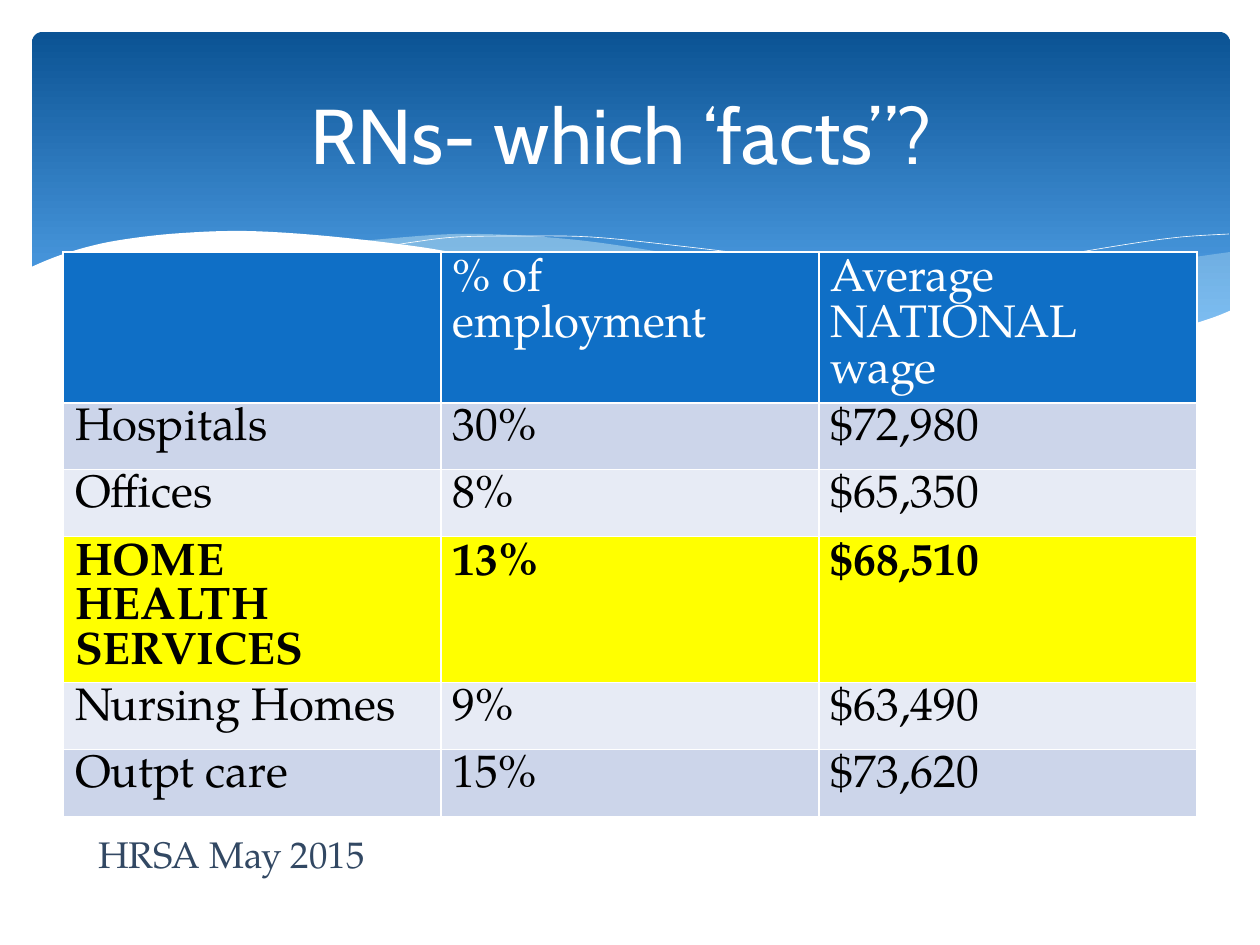
from lxml.etree import SubElement
from pptx import Presentation
from pptx.dml.color import RGBColor
from pptx.enum.shapes import MSO_SHAPE as SHAPE
from pptx.enum.text import MSO_ANCHOR as ANCHOR, PP_ALIGN as ALIGN
from pptx.oxml.ns import qn
from pptx.util import Emu, Pt

SCALE = 10320
SANS = "Cabin"
SERIF = "TeX Gyre Pagella"

WHITE = RGBColor(0xFF, 0xFF, 0xFF)
BLACK = RGBColor(0x00, 0x00, 0x00)
NAVY = RGBColor(0x0B, 0x53, 0x94)
SKY = RGBColor(0x59, 0xAA, 0xF2)
MIST = RGBColor(0xDB, 0xF5, 0xF9)
SLATE = RGBColor(0x32, 0x48, 0x63)
BLUE = RGBColor(0x0F, 0x6F, 0xC6)
BAND_DARK = RGBColor(0xCC, 0xD5, 0xEA)
BAND_LIGHT = RGBColor(0xE7, 0xEB, 0xF5)
YELLOW = RGBColor(0xFF, 0xFF, 0x00)

RIGHT_TOP = [(1230, 252), (1177, 260), (1123, 272), (1084, 281), (982, 306),
             (890, 324), (834, 334)]
RIGHT_BOTTOM = [(834, 334), (906, 344), (969, 348), (1026, 350), (1076, 347),
                (1121, 342), (1161, 334), (1196, 324), (1230, 311)]
MIDDLE_TOP = [(1125, 344), (1055, 334), (976, 321), (890, 302), (792, 279),
              (717, 262), (648, 250), (586, 241), (529, 236), (478, 234),
              (433, 235), (361, 241)]
MIDDLE_BOTTOM = [(361, 241), (431, 251), (509, 266), (566, 279), (667, 303),
                 (758, 322), (838, 336), (910, 345), (974, 350), (1030, 351),
                 (1081, 349), (1125, 344)]
LONG_LINE = [(390, 246), (414, 242), (457, 237), (525, 236), (591, 237),
             (671, 245), (766, 257), (876, 276), (1002, 304), (1143, 342)]
RISING_LINE = [(773, 323), (876, 297), (978, 273), (1053, 257), (1129, 244),
               (1181, 237), (1229, 234)]
FRONT_TOP = [(29, 268), (58, 256), (95, 245), (134, 238), (183, 233),
             (244, 231), (315, 235), (398, 244), (460, 254), (563, 277),
             (667, 301), (760, 321), (843, 334), (915, 343), (980, 347),
             (1038, 348), (1087, 346), (1132, 339), (1172, 330), (1209, 319),
             (1232, 310)]
FRONT_BASE = [(1232, 415), (29, 415)]

ROWS = [
    ("", "% of employment", "Average NATIONAL wage"),
    ("Hospitals", "30%", "$72,980"),
    ("Offices", "8%", "$65,350"),
    ("HOME HEALTH SERVICES", "13%", "$68,510"),
    ("Nursing Homes", "9%", "$63,490"),
    ("Outpt care", "15%", "$73,620"),
]
HEIGHTS = [151, 67, 67, 146, 67, 67]
COL_WIDTH = 378
HIGHLIGHT = 3


def px(n):
    return Emu(round(n * SCALE))


def box(*lengths):
    return [px(n) for n in lengths]


def smooth(points, steps=5):
    padded = [points[0], *points, points[-1]]
    curve = [points[0]]
    for a, b, c, d in zip(padded, padded[1:], padded[2:], padded[3:]):
        for i in range(1, steps + 1):
            t = i / steps
            curve.append(tuple(
                (2 * q + (r - p) * t + (2 * p - 5 * q + 4 * r - u) * t ** 2
                 + (3 * q - p - 3 * r + u) * t ** 3) / 2
                for p, q, r, u in zip(a, b, c, d)))
    return curve


def add_wave(s, points, color=None, opacity=100):
    pts = [box(*point) for point in points]
    builder = s.shapes.build_freeform(*pts[0], scale=1.0)
    builder.add_line_segments(pts[1:], close=color is not None)
    sp = builder.convert_to_shape()
    sp.shadow.inherit = False
    if color is None:
        sp.fill.background()
        sp.line.color.rgb = WHITE
        sp.line.width = Pt(0.5)
        return
    sp.fill.solid()
    sp.fill.fore_color.rgb = color
    sp.line.fill.background()
    if opacity < 100:
        clr = sp.fill._xPr.find(qn("a:solidFill"))[0]
        SubElement(clr, qn("a:alpha"), val=str(opacity * 1000))


def add_banner(s):
    sp = s.shapes.add_shape(SHAPE.ROUNDED_RECTANGLE, *box(32, 32, 1198, 340))
    sp.adjustments[0] = 0.03
    sp.shadow.inherit = False
    sp.line.fill.background()
    sp.fill.gradient()
    sp.fill.gradient_angle = 270
    for stop, color, pos in zip(sp.fill.gradient_stops, (NAVY, SKY), (0, 0.9)):
        stop.color.rgb = color
        stop.position = pos


def add_run(p, text, size, font, color, bold=False):
    r = p.add_run()
    r.text = text
    r.font.size = Pt(size)
    r.font.name = font
    r.font.color.rgb = color
    r.font.bold = bold


def set_title(s, text):
    sp = s.shapes.title
    sp.left, sp.top, sp.width, sp.height = box(63, 47, 1134, 173)
    tf = sp.text_frame
    tf.vertical_anchor = ANCHOR.MIDDLE
    p = tf.paragraphs[0]
    p.alignment = ALIGN.CENTER
    add_run(p, text, 63, SANS, WHITE)
    s.shapes._spTree.append(sp._element)


def set_borders(cell):
    tc_pr = cell._tc.get_or_add_tcPr()
    for i, side in enumerate(("lnL", "lnR", "lnT", "lnB")):
        ln = tc_pr.makeelement(qn("a:" + side), {"w": str(Pt(1))})
        fill = SubElement(ln, qn("a:solidFill"))
        SubElement(fill, qn("a:srgbClr"), val=str(WHITE))
        tc_pr.insert(i, ln)


def row_fill(row):
    if row == 0:
        return BLUE
    if row == HIGHLIGHT:
        return YELLOW
    return BAND_DARK if row % 2 else BAND_LIGHT


def fill_cell(cell, text, row):
    cell.fill.solid()
    cell.fill.fore_color.rgb = row_fill(row)
    cell.margin_left = cell.margin_right = px(12)
    cell.margin_top = cell.margin_bottom = px(6)
    set_borders(cell)
    if text:
        p = cell.text_frame.paragraphs[0]
        p.alignment = ALIGN.LEFT
        p.line_spacing = Pt(36 if row else 37.5)
        add_run(p, text, 37, SERIF, BLACK if row else WHITE, row == HIGHLIGHT)


def add_wage_table(s):
    cols = len(ROWS[0])
    frame = s.shapes.add_table(
        len(ROWS), cols, *box(63, 252, COL_WIDTH * cols, sum(HEIGHTS)))
    table = frame.table
    for col in table.columns:
        col.width = px(COL_WIDTH)
    for i, (texts, height) in enumerate(zip(ROWS, HEIGHTS)):
        table.rows[i].height = px(height)
        for j, text in enumerate(texts):
            fill_cell(table.cell(i, j), text, i)


def add_source(s, text):
    tf = s.shapes.add_textbox(*box(86, 827, 291, 54)).text_frame
    tf.word_wrap = False
    p = tf.paragraphs[0]
    p.alignment = ALIGN.CENTER
    add_run(p, text, 30, SERIF, SLATE)


def main():
    prs = Presentation()
    prs.slide_width, prs.slide_height = box(1260, 945)
    s = prs.slides.add_slide(prs.slide_layouts[5])
    add_banner(s)
    add_wave(s, smooth(RIGHT_TOP) + smooth(RIGHT_BOTTOM), MIST, 29)
    add_wave(s, smooth(MIDDLE_TOP) + smooth(MIDDLE_BOTTOM), MIST, 40)
    add_wave(s, smooth(LONG_LINE))
    add_wave(s, smooth(RISING_LINE))
    add_wave(s, smooth(FRONT_TOP) + FRONT_BASE, WHITE)
    set_title(s, "RNs- which ‘facts”? ")
    add_wage_table(s)
    add_source(s, "HRSA May 2015")
    prs.save("out.pptx")


if __name__ == "__main__":
    main()
